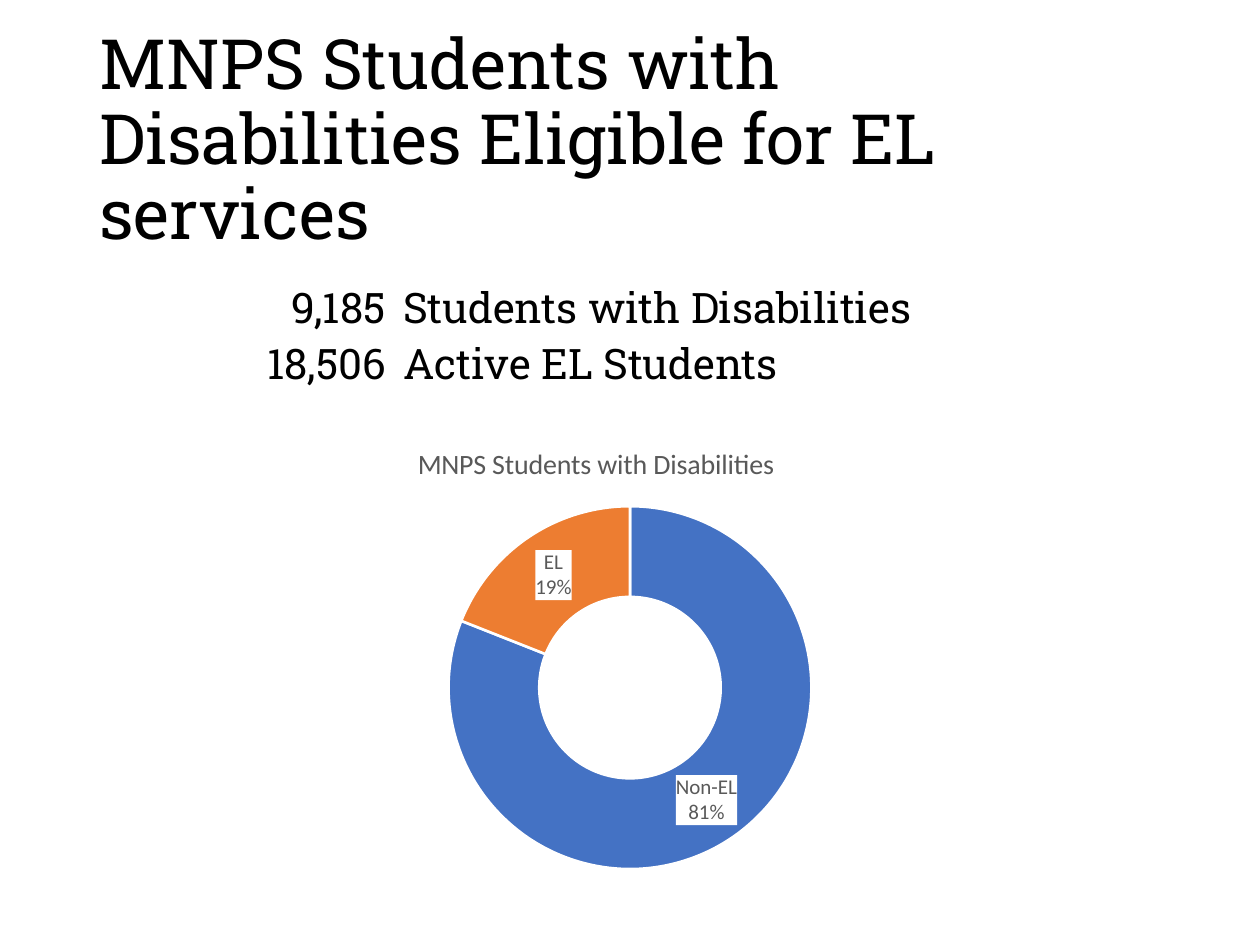
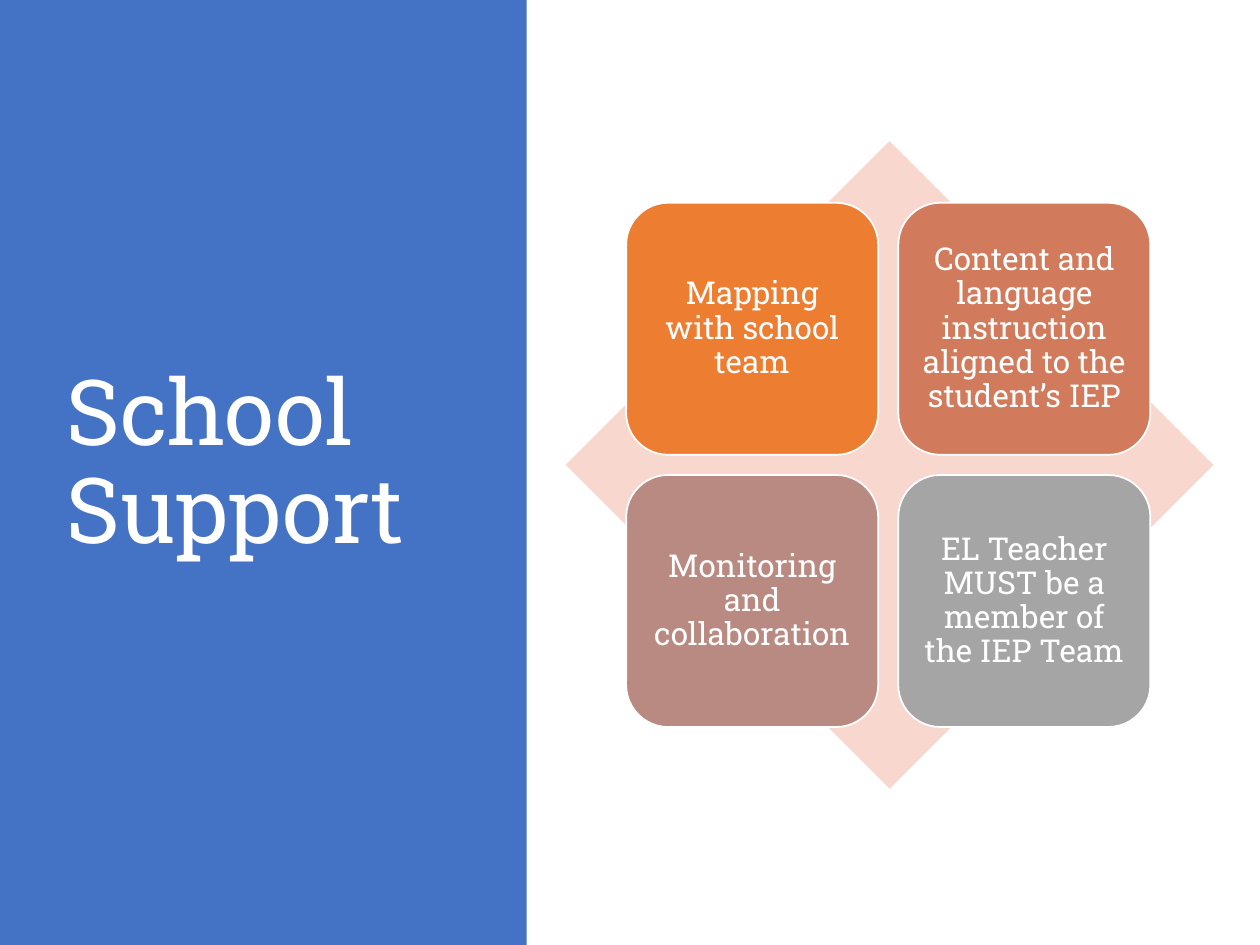
"""Build two slides on EL services for students with disabilities."""
from lxml import etree
from pptx import Presentation
from pptx.chart import data
from pptx.dml.color import RGBColor
from pptx.enum import chart as charts, shapes, text
from pptx.oxml import ns, parse_xml
from pptx.util import Inches, Pt

COLORS = {
    "white": "FFFFFF", "black": "000000", "gray_text": "595959",
    "blue": "4472C4", "orange": "ED7D31", "rust": "D17B5C",
    "mauve": "B98A82", "gray": "A5A5A5", "blush": "F8D7CE",
}
SLAB, SANS = "Roboto Slab", "Calibri"


class DeckBuilder:
    """Hold the deck style and the current page."""

    def __init__(self):
        self.deck = Presentation()
        self.deck.slide_width, self.deck.slide_height = Inches(10), Inches(7.5)
        self.page = None

    def color(self, name):
        return RGBColor.from_string(COLORS[name])

    def new_page(self):
        self.page = self.deck.slides.add_slide(self.deck.slide_layouts[6])

    def style(self, font, size, color, name=SLAB):
        font.name, font.size, font.bold = name, Pt(size), False
        font.color.rgb = self.color(color)

    def paint(self, item, color):
        item.fill.solid()
        item.fill.fore_color.rgb = self.color(color)

    def set_text(self, frame, words, size, color, align=text.PP_ALIGN.LEFT):
        frame.word_wrap = True
        frame.vertical_anchor = text.MSO_ANCHOR.MIDDLE
        para = frame.paragraphs[0]
        para.text, para.alignment, para.line_spacing = words, align, 0.9
        self.style(para.font, size, color)

    def title(self, words, place, size, color):
        box = self.page.shapes.add_textbox(*map(Inches, place))
        self.set_text(box.text_frame, words, size, color)

    def shape(self, kind, place, fill, line=None):
        shape = self.page.shapes.add_shape(kind, *map(Inches, place))
        shape.shadow.inherit = False
        self.paint(shape, fill)
        if line:
            shape.line.color.rgb = self.color(line)
            shape.line.width = Pt(1)
        else:
            shape.line.fill.background()
        return shape

    def tile(self, words, place, fill):
        tile = self.shape(shapes.MSO_SHAPE.ROUNDED_RECTANGLE, place, fill, "white")
        frame = tile.text_frame
        frame.margin_left = frame.margin_right = Inches(0.07)
        frame.margin_top = frame.margin_bottom = Inches(0.07)
        self.set_text(frame, words, 18, "white", text.PP_ALIGN.CENTER)

    def table(self, rows, place, widths):
        table = self.page.shapes.add_table(
            len(rows), len(widths), *map(Inches, place)).table
        table.first_row = table.horz_banding = False
        for column, width in zip(table.columns, widths):
            column.width = Inches(width)
        aligns = (text.PP_ALIGN.RIGHT, text.PP_ALIGN.LEFT)
        for row, values in zip(table.rows, rows):
            for cell, value, align in zip(row.cells, values, aligns):
                self.paint(cell, "white")
                cell.margin_left = cell.margin_right = Inches(0.07)
                cell.margin_top = cell.margin_bottom = 0
                para = cell.text_frame.paragraphs[0]
                para.text, para.alignment = value, align
                self.style(para.font, 24, "black")

    def layout(self, parent, before, **fractions):
        """Place a chart part by fractions of the chart area."""
        for old in parent.findall(ns.qn("c:layout")):
            parent.remove(old)
        layout = etree.Element(ns.qn("c:layout"))
        manual = etree.SubElement(layout, ns.qn("c:manualLayout"))
        settings = {"xMode": "edge", "yMode": "edge", **fractions}
        if "w" in fractions:
            settings = {"layoutTarget": "inner", **settings}
        for tag, value in settings.items():
            etree.SubElement(manual, ns.qn(f"c:{tag}")).set("val", str(value))
        parent.find(ns.qn(f"c:{before}")).addprevious(layout)

    def doughnut(self, heading, shares, place, fills):
        source = data.CategoryChartData()
        source.categories = list(shares)
        source.add_series("Series 1", shares.values())
        chart = self.page.shapes.add_chart(
            charts.XL_CHART_TYPE.DOUGHNUT, *map(Inches, place), source).chart
        self.style(chart.font, 10, "black", SANS)
        chart.has_legend = False
        chart.has_title = True
        para = chart.chart_title.text_frame.paragraphs[0]
        para.text = heading
        self.style(para.font, 16, "gray_text", SANS)
        self.layout(chart.chart_title._element, "overlay", x=0.3, y=0.06)
        plot = chart.plots[0]
        self.layout(plot._element.getparent(), "doughnutChart",
                    x=0.33, y=0.2, w=0.34, h=0.76)
        plot.vary_by_categories = True
        series = plot.series[0]
        for index, fill in enumerate(fills):
            look = series.points[index].format
            self.paint(look, fill)
            look.line.color.rgb = self.color("white")
            look.line.width = Pt(1.5)
        self.label(series.data_labels)

    def label(self, labels):
        """Show category and percent on a white ground."""
        labels.show_value = False
        labels.show_category_name = labels.show_percentage = True
        labels.number_format, labels.number_format_is_linked = "0%", False
        self.style(labels.font, 12, "gray_text", SANS)
        element = labels._element
        element.find(ns.qn("c:txPr")).addprevious(parse_xml(
            f'<c:spPr {ns.nsdecls("c", "a")}><a:solidFill>'
            f'<a:srgbClr val="{COLORS["white"]}"/></a:solidFill></c:spPr>'))
        separator = etree.Element(ns.qn("c:separator"))
        separator.text = "\n"
        element.find(ns.qn("c:showBubbleSize")).addnext(separator)


def build_eligibility(builder):
    builder.new_page()
    builder.title("MNPS Students with Disabilities Eligible for EL services",
                  (0.69, 0.4, 8.62, 1.45), 39.6, "black")
    builder.table([("9,185", "Students with Disabilities"),
                   ("18,506", "Active EL Students")],
                  (1.48, 2.22, 7.04, 0.88), (1.65, 5.39))
    builder.doughnut("MNPS Students with Disabilities", {"Non-EL": 81, "EL": 19},
                     (0.69, 3.26, 8.62, 3.79), ("blue", "orange"))


def build_support(builder):
    builder.new_page()
    builder.shape(shapes.MSO_SHAPE.RECTANGLE, (0, 0, 4.18, 7.5), "blue")
    builder.title("School Support", (0.43, 0.68, 3.12, 6.02), 52, "white")
    builder.shape(shapes.MSO_SHAPE.DIAMOND, (4.49, 1.12, 5.14, 5.14), "blush")
    supports = [
        ("Mapping with school team", "orange"),
        ("Content and language instruction aligned to the student’s IEP", "rust"),
        ("Monitoring and collaboration", "mauve"),
        ("EL Teacher MUST be a member of the IEP Team", "gray"),
    ]
    side, pitch = 2, 2.16
    for index, (words, fill) in enumerate(supports):
        row, column = divmod(index, 2)
        builder.tile(words, (4.97 + column * pitch, 1.61 + row * pitch,
                             side, side), fill)


def main():
    builder = DeckBuilder()
    build_eligibility(builder)
    build_support(builder)
    builder.deck.save("out.pptx")


if __name__ == "__main__":
    main()
